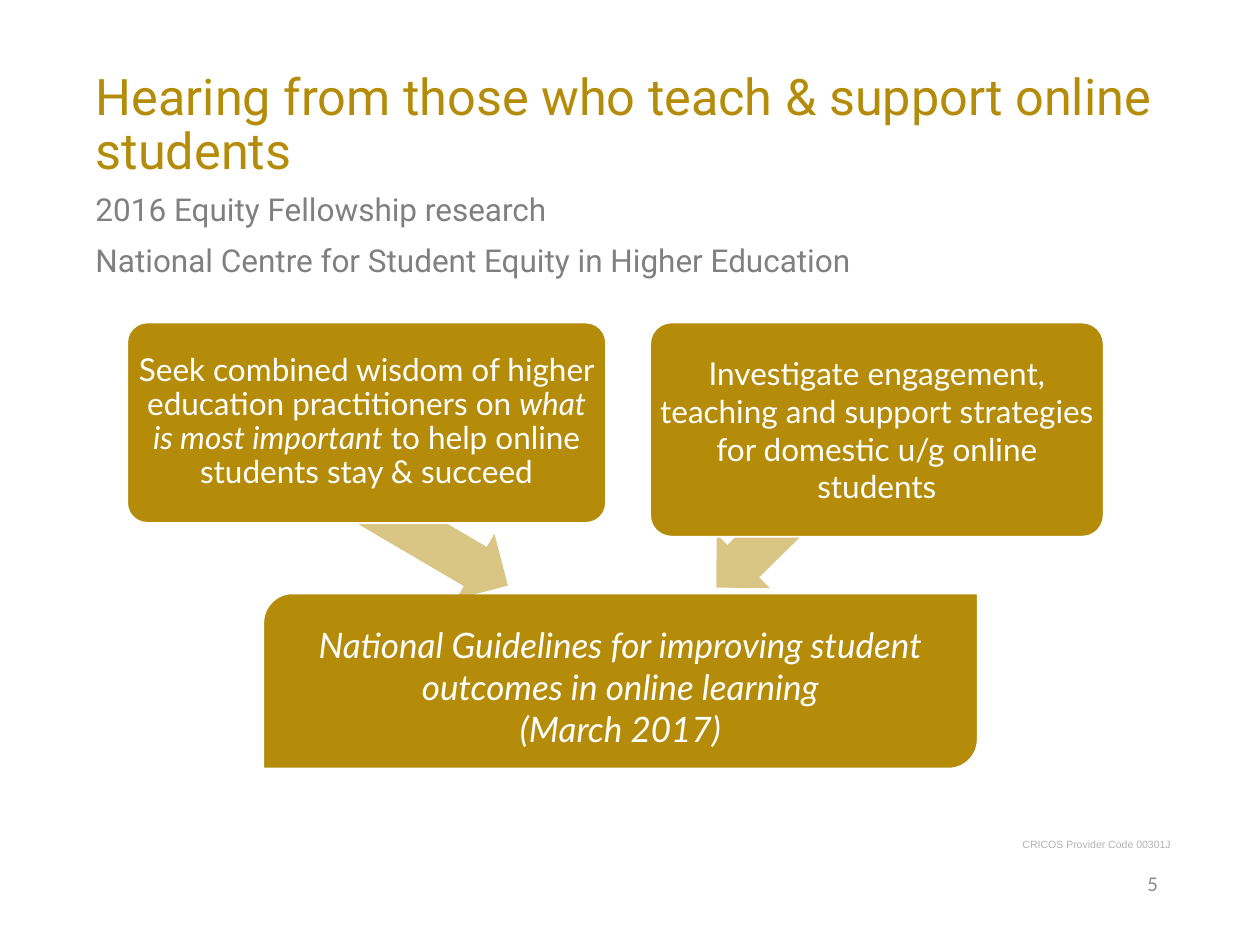
from pptx import Presentation
from pptx.dml.color import RGBColor
from pptx.enum.shapes import MSO_SHAPE
from pptx.enum.text import MSO_ANCHOR, MSO_AUTO_SIZE, PP_ALIGN
from pptx.oxml.ns import qn
from pptx.util import Inches, Pt
from lxml.etree import SubElement

THEME = {
    "gold": RGBColor(0xB5, 0x8C, 0x0A),
    "white": RGBColor(0xFF, 0xFF, 0xFF),
    "title": {"name": "Roboto", "size": Pt(28.8), "color": "B58C0A"},
    "subtitle": {"name": "Roboto", "size": Pt(18), "color": "808080"},
    "box": {"name": "Lato", "size": Pt(18), "color": "FFFFFF"},
    "outcome": {"name": "Lato", "size": Pt(20), "color": "FFFFFF", "italic": True},
    "code": {"name": "Arial", "size": Pt(6), "color": "B2B2B2"},
    "number": {"name": "Calibri", "size": Pt(12), "color": "8C8C8C"},
}

presentation = Presentation()
presentation.slide_width, presentation.slide_height = Inches(10), Inches(7.5)
column = presentation.slide_width / 100
row = presentation.slide_height / 75
slide = presentation.slides.add_slide(presentation.slide_layouts[5])


def grid(left, top, width, height):
    """Turn columns and rows of the 100 by 75 grid into lengths."""
    return [round(n * unit) for n, unit in
            zip((left, top, width, height), (column, row, column, row))]


def write(shape, paragraphs, style, align=PP_ALIGN.LEFT, anchor=MSO_ANCHOR.MIDDLE,
          spacing=1.0, gap=0):
    """Fill a shape with paragraphs, each a list of (text, extra font values)."""
    frame = shape.text_frame
    frame.word_wrap, frame.vertical_anchor = True, anchor
    frame.auto_size = MSO_AUTO_SIZE.NONE
    for index, runs in enumerate(paragraphs):
        paragraph = frame.add_paragraph() if index else frame.paragraphs[0]
        paragraph.alignment, paragraph.line_spacing = align, spacing
        paragraph.space_before = Pt(gap if index else 0)
        for text, extra in runs:
            run = paragraph.add_run()
            run.text = text
            for key, value in {**THEME[style], **extra}.items():
                if key == "color":
                    run.font.color.rgb = RGBColor.from_string(value)
                else:
                    setattr(run.font, key, value)


# Title, subtitle and footer
title = slide.shapes.title
title.left, title.top, title.width, title.height = grid(6.6, 6.3, 87.3, 7.4)
write(title, [[("Hearing from those who teach & support online students", {})]],
      "title", spacing=0.9)

subtitle = slide.shapes.add_textbox(*grid(6.6, 14.9, 87.3, 8.7))
write(subtitle, [[("2016 Equity Fellowship research", {})],
                 [("National Centre for Student Equity in Higher Education", {})]],
      "subtitle", anchor=MSO_ANCHOR.TOP, spacing=0.9, gap=10)

provider_code = slide.shapes.add_textbox(*grid(64.9, 66, 29, 2))
write(provider_code, [[("CRICOS Provider Code 00301J", {})]], "code",
      PP_ALIGN.RIGHT, MSO_ANCHOR.TOP)
slide_number = slide.shapes.add_textbox(*grid(70.4, 68.1, 22.5, 4))
write(slide_number, [[("5", {})]], "number", PP_ALIGN.RIGHT)

# Diagram, back to front: outcome, then each arrow below its source box
ARROW, BOX = MSO_SHAPE.LEFT_ARROW, MSO_SHAPE.ROUNDED_RECTANGLE
outcome_text = [
    [("National Guidelines for improving student outcomes in online learning", {})],
    [("(March 2017)", {})],
]
investigate_text = [[("Investigate engagement, teaching and support strategies "
                      "for domestic u/g online students", {})]]
wisdom_text = [[
    ("Seek combined wisdom of higher education practitioners on ", {}),
    ("what is most important", {"italic": True}),
    (" to help online students stay & succeed", {}),
]]
diagram = [
    # preset, place, adjustments, rotation, text, style, line spacing, top margin
    (MSO_SHAPE.ROUND_2_DIAG_RECTANGLE, (20.9, 47.1, 56.7, 13.9), (), 0,
     outcome_text, "outcome", 1.0, 0.12),
    (ARROW, (54.3, 37.4, 17.8, 6), (0.6, 0.5), 315.5, None, None, None, 0),
    (BOX, (51.6, 25.6, 36, 17), (0.1,), 0, investigate_text, "box", 1.0, 0.03),
    (ARROW, (24.2, 39.1, 17.3, 6), (0.6, 0.5), 210.4, None, None, None, 0),
    (BOX, (10.1, 25.6, 38, 15.9), (0.1,), 0, wisdom_text, "box", 0.9, 0.03),
]
for preset, place, adjustments, rotation, text, style, spacing, top_margin in diagram:
    shape = slide.shapes.add_shape(preset, *grid(*place))
    shape.shadow.inherit = False
    shape.rotation = rotation
    for index, value in enumerate(adjustments):
        shape.adjustments[index] = value
    shape.fill.solid()
    shape.fill.fore_color.rgb = THEME["gold"]
    if text is None:
        shape.line.fill.background()
        color = shape.fill._xPr.find(qn("a:solidFill"))[0]
        SubElement(color, qn("a:alpha"), val="50000")
        continue
    shape.line.color.rgb = THEME["white"]
    shape.line.width = Pt(1)
    margins = {"margin_left": 0.03, "margin_right": 0.03,
               "margin_top": top_margin, "margin_bottom": 0.03}
    for side, inches in margins.items():
        setattr(shape.text_frame, side, Inches(inches))
    write(shape, text, style, PP_ALIGN.CENTER, spacing=spacing)

presentation.save("out.pptx")
